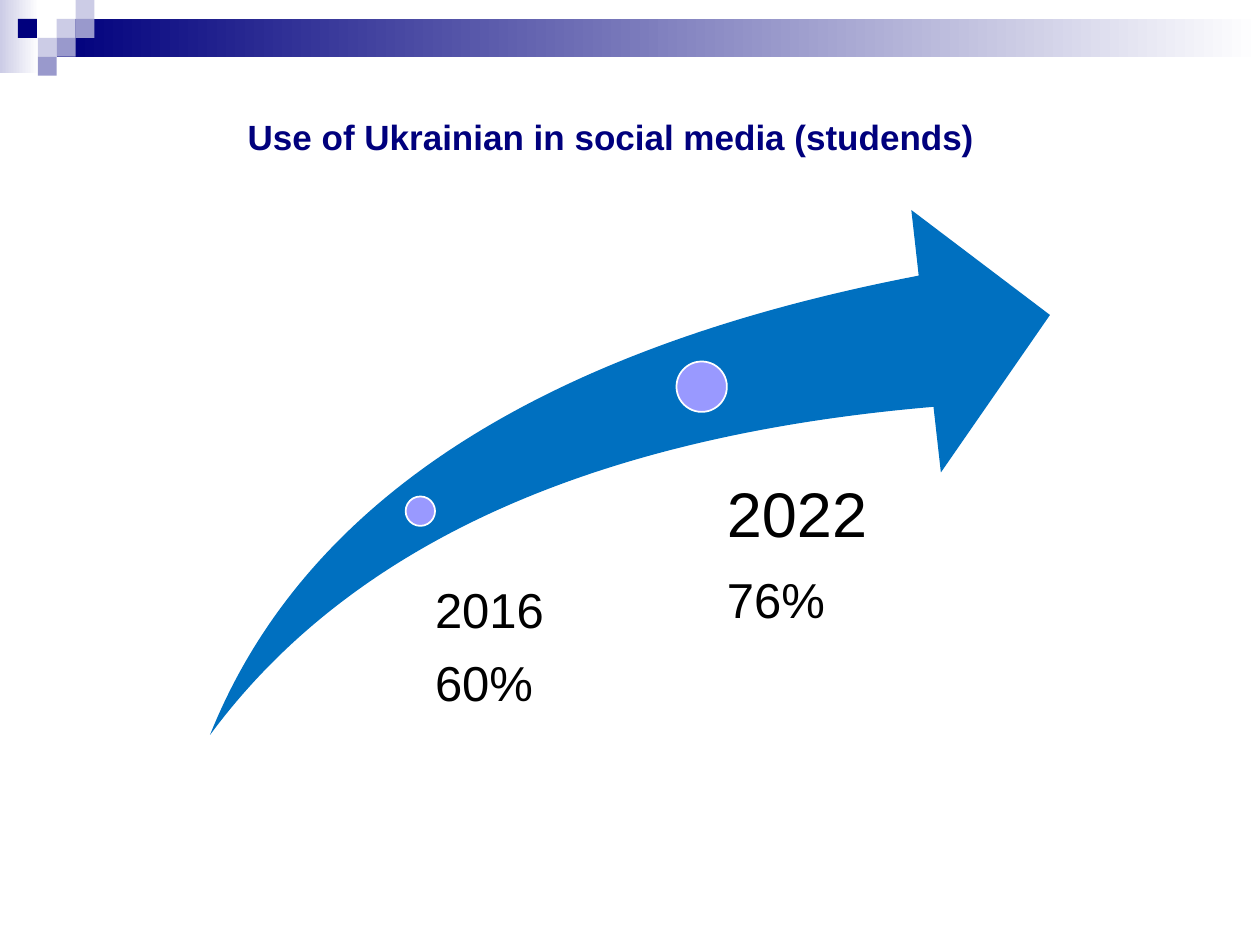
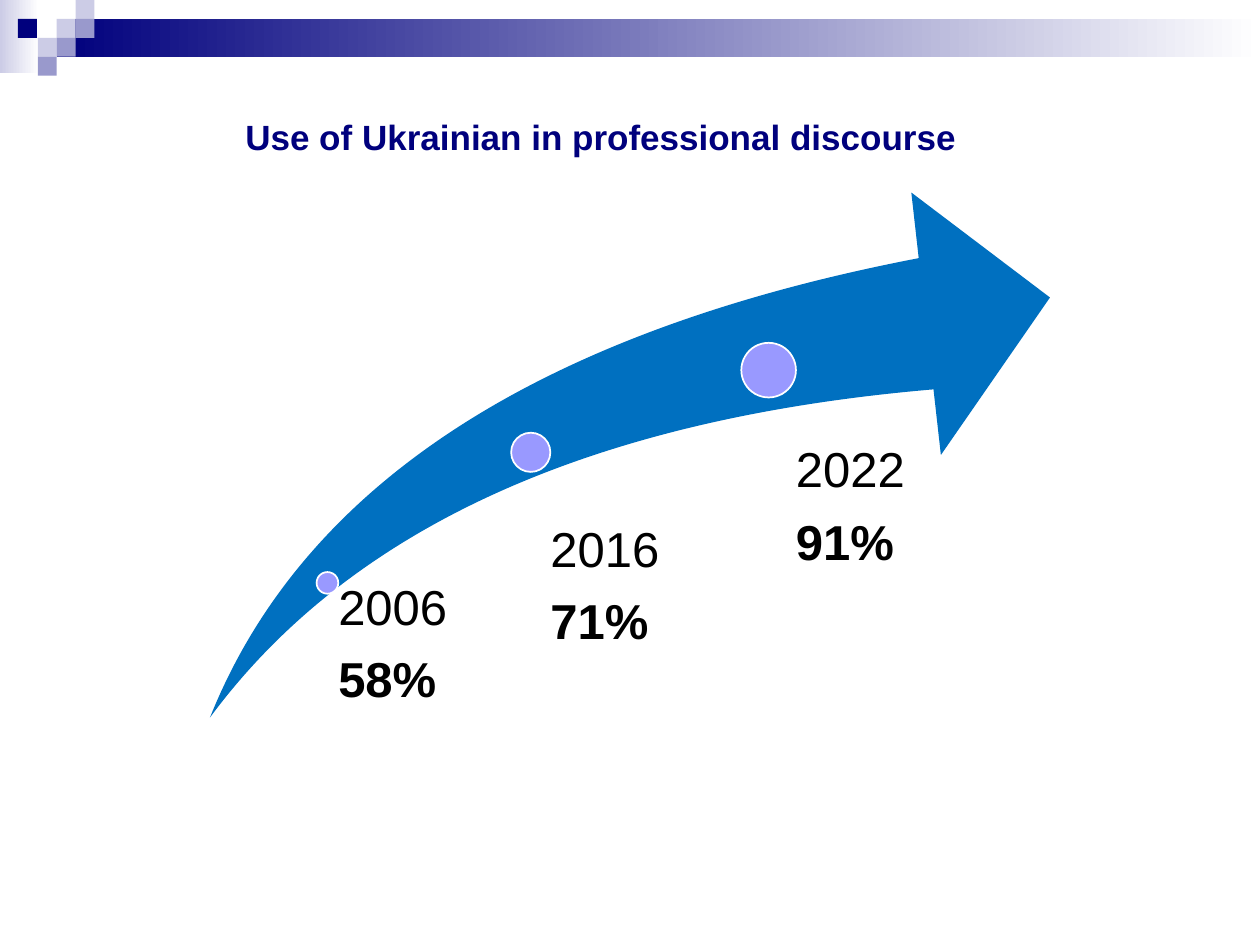
from pptx import Presentation
from pptx.dml.color import RGBColor
from pptx.enum.shapes import MSO_SHAPE as Preset
from pptx.enum.text import MSO_ANCHOR as Anchor, MSO_AUTO_SIZE as AutoSize, PP_ALIGN as Align
from pptx.util import Pt

PAGE_WIDTH, PAGE_HEIGHT = 720, 540
NAVY, LAVENDER, MAUVE = "00007D", "CCCCE6", "9999CC"
BLUE, PERIWINKLE, WHITE, BLACK = "0070C0", "9999FF", "FFFFFF", "000000"
GRID = 10.8
BANDS = [(0, 0, 22.3, 41.8, LAVENDER), (32.4, GRID, 687.6, 21.6, NAVY)]
SQUARES = [(3, 1, LAVENDER), (4, 0, LAVENDER), (4, 1, MAUVE), (2, 2, LAVENDER),
           (0.95, 1, NAVY), (3, 2, MAUVE), (2, 3, MAUVE)]


def colour(code):
    """Turn a hex string into a colour."""
    return RGBColor.from_string(code)


def assign(target, values):
    """Set attributes of the target from a dict."""
    for name, value in values.items():
        setattr(target, name, value)


class TrendDeck:
    """Hold the deck style and the current slide."""

    font = "Arial"
    title_format = {"size": Pt(20), "bold": True}
    frame_format = {"margin_left": 0, "margin_top": 0, "margin_right": 0, "margin_bottom": 0,
                    "word_wrap": True, "auto_size": AutoSize.NONE}

    def __init__(self):
        """Open a deck at the page size."""
        self.deck = Presentation()
        assign(self.deck, {"slide_width": Pt(PAGE_WIDTH), "slide_height": Pt(PAGE_HEIGHT)})
        self.layout = self.deck.slide_layouts[5]
        self.page = None

    def add_page(self, title, left):
        """Start a page with a centred title."""
        self.page = self.deck.slides.add_slide(self.layout)
        box = self.page.shapes.title
        assign(box, {"left": Pt(left), "top": Pt(58), "width": Pt(648), "height": Pt(40)})
        assign(box.text_frame, {**self.frame_format, "vertical_anchor": Anchor.MIDDLE})
        para = box.text_frame.paragraphs[0]
        para.alignment = Align.CENTER
        self.add_span(para, title, NAVY, self.title_format)

    def add_span(self, para, text, ink, values):
        """Add formatted text to a paragraph."""
        span = para.add_run()
        span.text = text
        assign(span.font, {"name": self.font, **values})
        span.font.color.rgb = colour(ink)

    def add_preset(self, preset, left, top, width, height, fill, line=None):
        """Add a flat preset shape."""
        shape = self.page.shapes.add_shape(preset, Pt(left), Pt(top), Pt(width), Pt(height))
        shape.shadow.inherit = False
        shape.fill.solid()
        shape.fill.fore_color.rgb = colour(fill)
        if line:
            shape.line.color.rgb = colour(line)
            shape.line.width = Pt(1)
        else:
            shape.line.fill.background()
        return shape

    def add_fading_band(self, left, top, width, height, start):
        """Add a rectangle that fades to white on the right."""
        band = self.add_preset(Preset.RECTANGLE, left, top, width, height, start)
        band.fill.gradient()
        band.fill.gradient_angle = 0
        for stop, code in zip(band.fill.gradient_stops, (start, WHITE)):
            stop.color.rgb = colour(code)
        return band

    def add_layout_corner(self):
        """Draw the bands and squares and move them to the layout."""
        pieces = [self.add_fading_band(*band) for band in BANDS]
        for column, row, code in SQUARES:
            pieces.append(self.add_preset(Preset.RECTANGLE, column * GRID, row * GRID,
                                          GRID, GRID, code))
        for number, piece in enumerate(pieces, start=101):
            piece.element.nvSpPr.cNvPr.id = number
            self.layout.shapes.element.append(piece.element)

    def add_arrow(self, top):
        """Add the rising arrow."""
        arrow = self.add_preset(Preset.SWOOSH_ARROW, 120, top, 480, 300, BLUE)
        for index in range(2):
            arrow.adjustments[index] = 0.25

    def add_milestone(self, dot, label_top, year, share, year_size=28, bold=False):
        """Add a dot with its year and share beginning at the dot's right edge."""
        left, top, size = dot
        self.add_preset(Preset.OVAL, left, top, size, size, PERIWINKLE, WHITE)
        box = self.page.shapes.add_textbox(Pt(left + size), Pt(label_top), Pt(110), Pt(84))
        frame = box.text_frame
        assign(frame, self.frame_format)
        year_para, share_para = frame.paragraphs[0], frame.add_paragraph()
        for para in (year_para, share_para):
            para.line_spacing = 0.9
        year_para.space_after = Pt(year_size * 0.4)
        self.add_span(year_para, year, BLACK, {"size": Pt(year_size)})
        self.add_span(share_para, share, BLACK, {"size": Pt(28), "bold": bold})


def main():
    """Build both pages and save the deck."""
    trends = TrendDeck()

    trends.add_page("Use of Ukrainian in social media (studends)", 25.2)
    trends.add_layout_corner()
    trends.add_arrow(120)
    trends.add_milestone((231.8, 283.7, 16.8), 335, "2016", "60%")
    trends.add_milestone((386.6, 206.6, 28.8), 276, "2022", "76%", year_size=36)

    trends.add_page("Use of Ukrainian in professional discourse", 19.4)
    trends.add_arrow(110)
    for dot, label_top, year, share in [((180.9, 326.9, 12.4), 333, "2006", "58%"),
                                        ((292.1, 247.3, 22.4), 300, "2016", "71%"),
                                        ((423.6, 195.9, 31.2), 254.5, "2022", "91%")]:
        trends.add_milestone(dot, label_top, year, share, bold=True)

    trends.deck.save("out.pptx")


if __name__ == "__main__":
    main()
